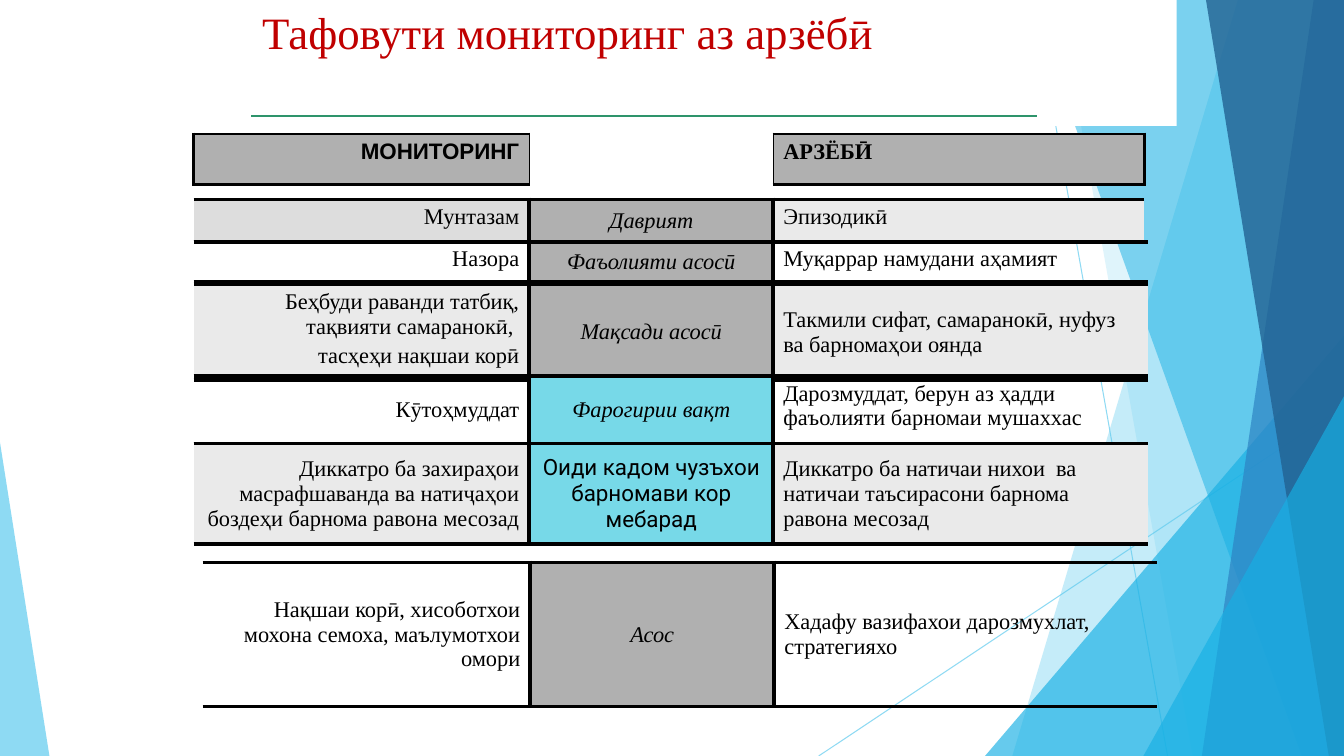
from dataclasses import dataclass

from lxml.etree import SubElement
from pptx import Presentation
from pptx.dml.color import RGBColor
from pptx.enum.shapes import MSO_CONNECTOR, MSO_SHAPE
from pptx.enum.text import MSO_ANCHOR, MSO_AUTO_SIZE, PP_ALIGN
from pptx.oxml.ns import qn
from pptx.util import Inches, Pt

WIDTH, HEIGHT = 13.33, 7.5
SERIF = "Times New Roman"
BLACK, GREY, PALE, CYAN = "000000", "B0B0B0", "EAEAEA", "77D9E8"
SKY, AZURE = "5FCBEF", "17B0E4"
TOP, MIDDLE = MSO_ANCHOR.TOP, MSO_ANCHOR.MIDDLE
ALIGNMENTS = (PP_ALIGN.RIGHT, PP_ALIGN.CENTER, PP_ALIGN.LEFT)
HEADER_BORDERS = (
    {"L": 2.25, "T": 2.25, "R": 1, "B": 2.25},
    {"L": 1, "R": 1},
    {"L": 1, "T": 2.25, "R": 2.25, "B": 2.25},
)
ROW_BORDERS = (
    {"T": 3, "R": 3, "B": 3},
    {"L": 3, "T": 3, "R": 3, "B": 3},
    {"L": 3, "T": 3, "B": 3},
)


@dataclass
class Ray:
    start: tuple[float, float]
    end: tuple[float, float]
    color: str
    width: float
    alpha: int = 100


@dataclass
class Panel:
    top_x: float
    bottom_x: float
    color: str
    alpha: int


@dataclass
class Wedge:
    left: float
    top: float
    width: float
    color: str
    alpha: int
    apex: float


@dataclass
class Entry:
    text: str = ""
    fill: str | None = None
    anchor: MSO_ANCHOR = MIDDLE
    font: str = SERIF
    bold: bool = False
    italic: bool = False


@dataclass
class Strip:
    top: float
    height: float
    entries: tuple[Entry, Entry, Entry]
    left: float = 1.92
    columns: tuple[float, float, float] = (3.33, 2.42, 3.72)
    borders: tuple = ROW_BORDERS


BACKDROP = (
    Ray((10.25, 0), (11.58, HEIGHT), SKY, 0.75, 70),
    Ray((WIDTH, 4.03), (8.12, HEIGHT), SKY, 0.75, 70),
    Panel(12.28, 10.04, SKY, 36),
    Panel(10.5, 11.83, SKY, 20),
    Wedge(9.77, 3.33, 3.56, AZURE, 66, 1),
    Panel(10.21, 12.91, AZURE, 50),
    Panel(13.03, 11.92, "2E83C3", 70),
    Panel(11.96, 13.18, "226292", 80),
    Wedge(11.34, 3.93, 1.99, AZURE, 66, 1),
    Wedge(0, 4.39, 0.49, SKY, 70, 0),
)

NARROW = (3.33, 2.42, 3.68)
STRIPS = (
    Strip(1.33, 0.5, (
        Entry("МОНИТОРИНГ", GREY, TOP, "Arial", bold=True),
        Entry(),
        Entry("АРЗЁБӢ", GREY, TOP, bold=True),
    ), columns=NARROW, borders=HEADER_BORDERS),
    Strip(1.98, 0.42, (
        Entry("Мунтазам", "DDDDDD", TOP),
        Entry("Даврият", GREY, italic=True),
        Entry("Эпизодикӣ", PALE, TOP),
    ), columns=NARROW),
    Strip(2.4, 0.4, (
        Entry("Назора", anchor=TOP),
        Entry("Фаъолияти асосӣ", GREY, italic=True),
        Entry("Муқаррар намудани аҳамият", anchor=TOP),
    )),
    Strip(2.82, 0.95, (
        Entry("Беҳбуди раванди татбиқ, тақвияти самаранокӣ, \nтасҳеҳи нақшаи корӣ", PALE, TOP),
        Entry("Мақсади асосӣ", GREY, italic=True),
        Entry("Такмили сифат, самаранокӣ, нуфуз ва барномаҳои оянда", PALE),
    )),
    Strip(3.73, 0.67, (
        Entry("Кӯтоҳмуддат"),
        Entry("Фарогирии вақт", CYAN, italic=True),
        Entry("Дарозмуддат, берун аз ҳадди фаъолияти барномаи мушаххас", anchor=TOP),
    )),
    Strip(4.4, 1, (
        Entry("Диккатро ба захираҳои масрафшаванда ва натиҷаҳои боздеҳи барнома равона месозад", PALE),
        Entry("Оиди кадом чузъхои барномави кор мебарад", CYAN, font="Roboto"),
        Entry("Диккатро ба натичаи нихои  ва натичаи таъсирасони барнома равона месозад", PALE),
    )),
    Strip(5.58, 1.43, (
        Entry("Нақшаи корӣ, хисоботхои мохона семоха, маълумотхои омори"),
        Entry("Асос", GREY, italic=True),
        Entry("Хадафу вазифахои дарозмухлат, стратегияхо"),
    ), left=2.01, columns=(3.25, 2.42, 3.8)),
)


def paint(fill, color: str) -> None:
    fill.solid()
    fill.fore_color.rgb = RGBColor.from_string(color)


def set_alpha(shape, alpha: int) -> None:
    for color in shape._element.spPr.iter(qn("a:srgbClr")):
        SubElement(color, qn("a:alpha"), val=str(alpha * 1000))


def write(frame, text: str, *, size: float, font: str = SERIF, color: str = BLACK,
          align: PP_ALIGN = PP_ALIGN.LEFT, bold: bool = False, italic: bool = False) -> None:
    frame.text = text
    for index, paragraph in enumerate(frame.paragraphs):
        paragraph.alignment = align
        paragraph.space_before = Pt(0.2 * size if index else 0)
        paragraph.font.name = font
        paragraph.font.size = Pt(size)
        paragraph.font.bold = bold
        paragraph.font.italic = italic
        paint(paragraph.font.fill, color)


def draw_ray(shapes, ray: Ray) -> None:
    ends = [Inches(value) for value in (*ray.start, *ray.end)]
    connector = shapes.add_connector(MSO_CONNECTOR.STRAIGHT, *ends)
    paint(connector.line.fill, ray.color)
    connector.line.width = Pt(ray.width)
    set_alpha(connector, ray.alpha)
    SubElement(connector._element.spPr, qn("a:effectLst"))


def draw_facet(shapes, facet: Panel | Wedge) -> None:
    if isinstance(facet, Panel):
        corners = [(facet.top_x, -0.01), (WIDTH, -0.01), (WIDTH, HEIGHT), (facet.bottom_x, HEIGHT)]
        points = [(Inches(x), Inches(y)) for x, y in corners]
        builder = shapes.build_freeform(*points[0])
        builder.add_line_segments(points[1:], close=True)
        shape = builder.convert_to_shape()
    else:
        shape = shapes.add_shape(
            MSO_SHAPE.ISOSCELES_TRIANGLE, Inches(facet.left), Inches(facet.top),
            Inches(facet.width), Inches(HEIGHT - facet.top))
        shape.adjustments[0] = facet.apex
    shape.shadow.inherit = False
    shape.line.fill.background()
    paint(shape.fill, facet.color)
    set_alpha(shape, facet.alpha)


def set_borders(cell, widths: dict[str, float]) -> None:
    properties = cell._tc.get_or_add_tcPr()
    for side in "LRTB":
        border = SubElement(properties, qn(f"a:ln{side}"), w=str(Pt(widths.get(side, 0))))
        if side in widths:
            solid = SubElement(border, qn("a:solidFill"))
            SubElement(solid, qn("a:srgbClr"), val=BLACK)
        else:
            SubElement(border, qn("a:noFill"))


def draw_strip(shapes, strip: Strip) -> None:
    table = shapes.add_table(
        1, len(strip.columns), Inches(strip.left), Inches(strip.top),
        Inches(sum(strip.columns)), Inches(strip.height)).table
    table.first_row = table.horz_banding = False
    for index, entry in enumerate(strip.entries):
        table.columns[index].width = Inches(strip.columns[index])
        cell = table.cell(0, index)
        set_borders(cell, strip.borders[index])
        if entry.fill:
            paint(cell.fill, entry.fill)
        else:
            cell.fill.background()
        cell.vertical_anchor = entry.anchor
        write(cell.text_frame, entry.text, size=16, font=entry.font,
              align=ALIGNMENTS[index], bold=entry.bold, italic=entry.italic)


def main() -> None:
    deck = Presentation()
    deck.slide_width, deck.slide_height = Inches(WIDTH), Inches(HEIGHT)
    shapes = deck.slides.add_slide(deck.slide_layouts[5]).shapes
    for piece in BACKDROP:
        (draw_ray if isinstance(piece, Ray) else draw_facet)(shapes, piece)

    heading = shapes.title
    heading.left, heading.top = Inches(2.5), Inches(0)
    heading.width, heading.height = Inches(9.17), Inches(1.25)
    paint(heading.fill, "FFFFFF")
    heading.text_frame.vertical_anchor = TOP
    heading.text_frame.auto_size = MSO_AUTO_SIZE.NONE
    write(heading.text_frame, "Тафовути мониторинг аз арзёбӣ", size=32, color="C00000")
    shapes._spTree.append(heading._element)

    draw_ray(shapes, Ray((2.49, 1.15), (10.29, 1.15), "2E946B", 1))
    for strip in STRIPS:
        draw_strip(shapes, strip)
    deck.save("out.pptx")


if __name__ == "__main__":
    main()
